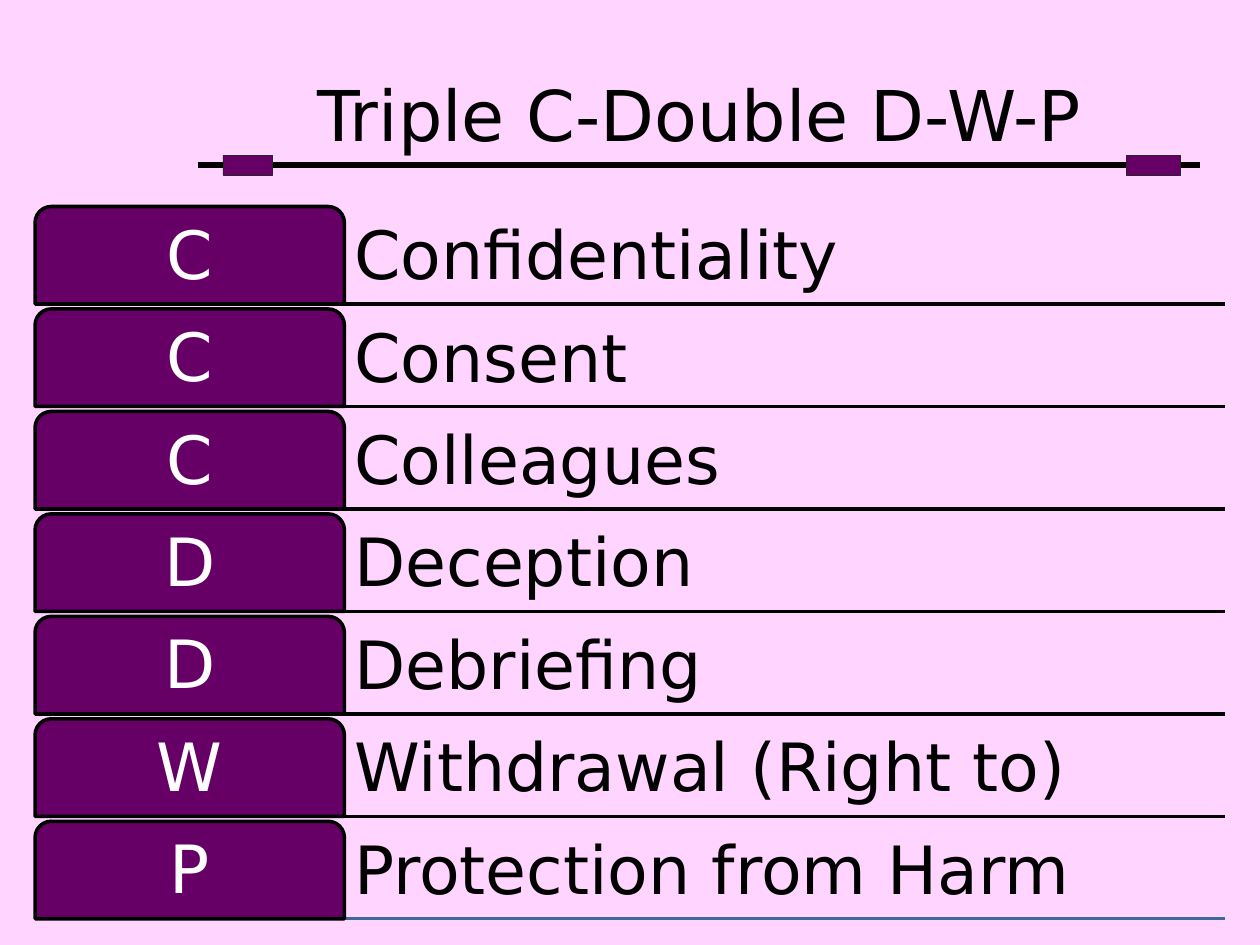
import pptx
import pptx.dml.color
import pptx.enum.shapes
import pptx.enum.text
import pptx.oxml.ns
import pptx.util
from lxml import etree

Pt = pptx.util.Pt
SHAPE = pptx.enum.shapes.MSO_SHAPE
ALIGN = pptx.enum.text.PP_ALIGN
ANCHOR = pptx.enum.text.MSO_ANCHOR
FIT = pptx.enum.text.MSO_AUTO_SIZE
COLOURS = {"page": "FFD5FF", "purple": "660066", "black": "000000",
           "white": "FFFFFF", "edge": "262626", "blue": "3F6797"}


class SlideBuilder:
    """Draws styled elements on the current slide, with lengths in points."""

    def __init__(self, page, font):
        self.page = page
        self.font = font

    def colour(self, name):
        return pptx.dml.color.RGBColor.from_string(COLOURS[name])

    def background(self, name):
        fill = self.page.background.fill
        fill.solid()
        fill.fore_color.rgb = self.colour(name)

    def line(self, left, right, y, width, colour="black"):
        rule = self.page.shapes.add_connector(
            pptx.enum.shapes.MSO_CONNECTOR.STRAIGHT, Pt(left), Pt(y), Pt(right), Pt(y))
        rule.line.width = Pt(width)
        rule.line.color.rgb = self.colour(colour)
        etree.SubElement(rule._element.spPr, pptx.oxml.ns.qn("a:effectLst"))

    def shape(self, kind, place, edge, width):
        shape = self.page.shapes.add_shape(kind, *map(Pt, place))
        shape.shadow.inherit = False
        shape.fill.solid()
        shape.fill.fore_color.rgb = self.colour("purple")
        shape.line.color.rgb = self.colour(edge)
        shape.line.width = Pt(width)
        return shape

    def box(self, place):
        return self.page.shapes.add_textbox(*map(Pt, place))

    def set_text(self, shape, text, size, colour, frame_format, para_format):
        frame = shape.text_frame
        para = frame.paragraphs[0]
        span = para.add_run()
        span.text = text
        span.font.color.rgb = self.colour(colour)
        formats = (
            (frame, {"word_wrap": True, **frame_format}),
            (para, para_format),
            (span.font, {"name": self.font, "size": Pt(size)}),
        )
        for target, values in formats:
            for key, value in values.items():
                setattr(target, key, value)


def main():
    deck = pptx.Presentation()
    deck.slide_width, deck.slide_height = Pt(720), Pt(540)
    page = deck.slides.add_slide(deck.slide_layouts[6])
    builder = SlideBuilder(page, "DejaVu Sans")
    builder.background("page")

    builder.line(113, 686, 94.3, 3.25)
    for left, width in ((127.4, 28.4), (643.7, 31)):
        builder.shape(SHAPE.RECTANGLE, (left, 88.6, width, 11.4), "edge", 0.25)
    title = builder.box((124.6, 37.4, 550, 55.4))
    builder.set_text(title, "Triple C-Double D-W-P", 40, "black",
                     {"auto_size": FIT.SHAPE_TO_FIT_TEXT}, {"alignment": ALIGN.CENTER})

    principles = (
        "Confidentiality", "Consent", "Colleagues", "Deception",
        "Debriefing", "Withdrawal (Right to)", "Protection from Harm",
    )
    left, right, split = 20, 700, 196.8
    top, pitch, height = 118, 58.55, 55.7
    margins = {f"margin_{side}": Pt(5.7) for side in ("left", "top", "right", "bottom")}
    tops = [top + row * pitch for row in range(len(principles))]

    for y in reversed(tops):
        builder.line(left, right, y + height, 2, "blue" if y == tops[-1] else "black")
    for y, principle in zip(tops, principles):
        label = builder.box((split, y, right - split, height))
        builder.set_text(label, principle, 38, "black",
                         {"vertical_anchor": ANCHOR.BOTTOM, **margins},
                         {"alignment": ALIGN.LEFT, "line_spacing": 0.9})
        tile = builder.shape(SHAPE.ROUND_2_SAME_RECTANGLE,
                             (left, y, split - left, height), "black", 2)
        builder.set_text(tile, principle[0], 38, "white",
                         {"vertical_anchor": ANCHOR.MIDDLE, **margins},
                         {"alignment": ALIGN.CENTER, "line_spacing": 0.9})

    deck.save("out.pptx")


if __name__ == "__main__":
    main()
